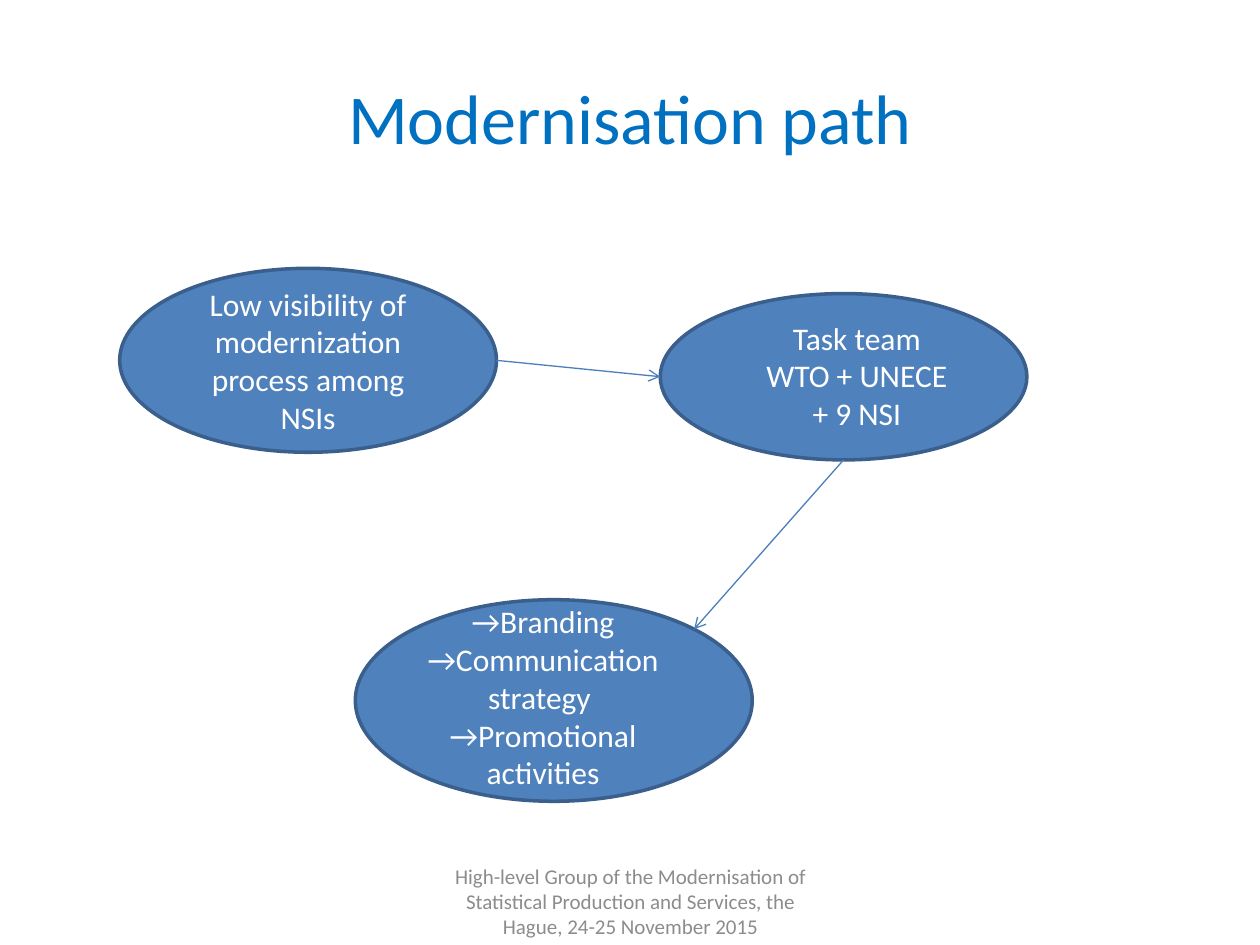
"""Build the modernisation path slide: three ovals linked by two arrows."""
import dataclasses
import typing

import lxml.etree
import pptx
import pptx.dml.color
import pptx.enum.shapes
import pptx.enum.text
import pptx.oxml.ns
import pptx.util

Inches = pptx.util.Inches
Anchor = pptx.enum.text.MSO_ANCHOR


@dataclasses.dataclass(frozen=True)
class Theme:
    font: str = "Calibri"
    title: str = "0070C0"
    light: str = "FFFFFF"
    fill: str = "4F81BD"
    edge: str = "3A5F8C"
    arrow: str = "4B7EBC"
    foot: str = "8C8C8C"
    big: float = 40
    body: float = 18
    small: float = 12
    rim: float = 2
    thin: float = 0.75


class Box(typing.NamedTuple):
    left: float
    top: float
    width: float
    height: float

    def place(self) -> list:
        return [Inches(size) for size in self]

    def point(self, across: float, down: float) -> tuple:
        return self.left + self.width * across, self.top + self.height * down


class Label(typing.NamedTuple):
    box: Box
    lines: list
    size: float
    color: str
    anchor: typing.Any = Anchor.TOP
    wrap: bool = True


class Arrow(typing.NamedTuple):
    start: tuple
    end: tuple


LOOK = Theme()
ISSUE = Box(0.95, 2.13, 2.99, 1.46)
TEAM = Box(5.24, 2.33, 2.91, 1.32)
GOALS = Box(2.82, 4.76, 3.15, 1.6)
DIAG = 0.5 ** 0.5 / 2

LABELS = [
    Label(Box(0.5, 0.3, 9, 1.25), ["Modernisation path"],
          LOOK.big, LOOK.title, Anchor.MIDDLE),
    Label(Box(5.94, 2.48, 1.72, 1.32), ["Task team", "WTO + UNECE", "+ 9 NSI"],
          LOOK.body, LOOK.light, wrap=False),
    Label(Box(3.19, 4.73, 2.24, 1.62),
          ["→Branding", "→Communication strategy ", "→Promotional activities"],
          LOOK.body, LOOK.light),
    Label(Box(3.42, 6.95, 3.17, 0.4),
          ["High-level Group of the Modernisation of Statistical Production "
           "and Services, the Hague, 24-25 November 2015"],
          LOOK.small, LOOK.foot, Anchor.MIDDLE),
]
ARROWS = [
    Arrow(ISSUE.point(1, 0.5), TEAM.point(0, 0.5)),
    Arrow(TEAM.point(0.5, 1), GOALS.point(0.5 + DIAG, 0.5 - DIAG)),
]


def paint(item: typing.Any, values: dict) -> None:
    """Set each named value on the item."""
    for name, value in values.items():
        setattr(item, name, value)


def tint(code: str) -> pptx.dml.color.RGBColor:
    """Turn a hex code into a colour."""
    return pptx.dml.color.RGBColor.from_string(code)


def write(shape: typing.Any, label: Label) -> None:
    """Put the label's centred lines in the shape."""
    frame = shape.text_frame
    frame.text = "\n".join(label.lines)
    paint(frame, {"word_wrap": label.wrap, "vertical_anchor": label.anchor})
    for para in frame.paragraphs:
        para.alignment = pptx.enum.text.PP_ALIGN.CENTER
        for run in para.runs:
            paint(run.font, {"name": LOOK.font, "size": pptx.util.Pt(label.size)})
            run.font.color.rgb = tint(label.color)


def stroke(line: typing.Any, color: str, width: float) -> None:
    """Give a line its colour and width."""
    line.color.rgb = tint(color)
    line.width = pptx.util.Pt(width)


def oval(slide: typing.Any, box: Box) -> typing.Any:
    """Draw one filled oval."""
    shape = slide.shapes.add_shape(pptx.enum.shapes.MSO_SHAPE.OVAL, *box.place())
    shape.shadow.inherit = False
    shape.fill.solid()
    shape.fill.fore_color.rgb = tint(LOOK.fill)
    stroke(shape.line, LOOK.edge, LOOK.rim)
    return shape


def link(slide: typing.Any, arrow: Arrow) -> None:
    """Draw one straight line with an open head at its end."""
    ends = [Inches(size) for size in arrow.start + arrow.end]
    line = slide.shapes.add_connector(pptx.enum.shapes.MSO_CONNECTOR.STRAIGHT, *ends)
    stroke(line.line, LOOK.arrow, LOOK.thin)
    name = pptx.oxml.ns.qn
    lxml.etree.SubElement(line.line._get_or_add_ln(), name("a:tailEnd"), type="arrow")
    lxml.etree.SubElement(line._element.spPr, name("a:effectLst"))


def main() -> None:
    """Build and save the slide."""
    deck = pptx.Presentation()
    paint(deck, {"slide_width": Inches(10), "slide_height": Inches(7.5)})
    slide = deck.slides.add_slide(deck.slide_layouts[6])
    first, *_ = [oval(slide, box) for box in (ISSUE, TEAM, GOALS)]
    write(first, Label(ISSUE, ["Low visibility of modernization process among NSIs"],
                       LOOK.body, LOOK.light, Anchor.MIDDLE))
    for arrow in ARROWS:
        link(slide, arrow)
    for label in LABELS:
        write(slide.shapes.add_textbox(*label.box.place()), label)
    deck.save("out.pptx")


if __name__ == "__main__":
    main()
